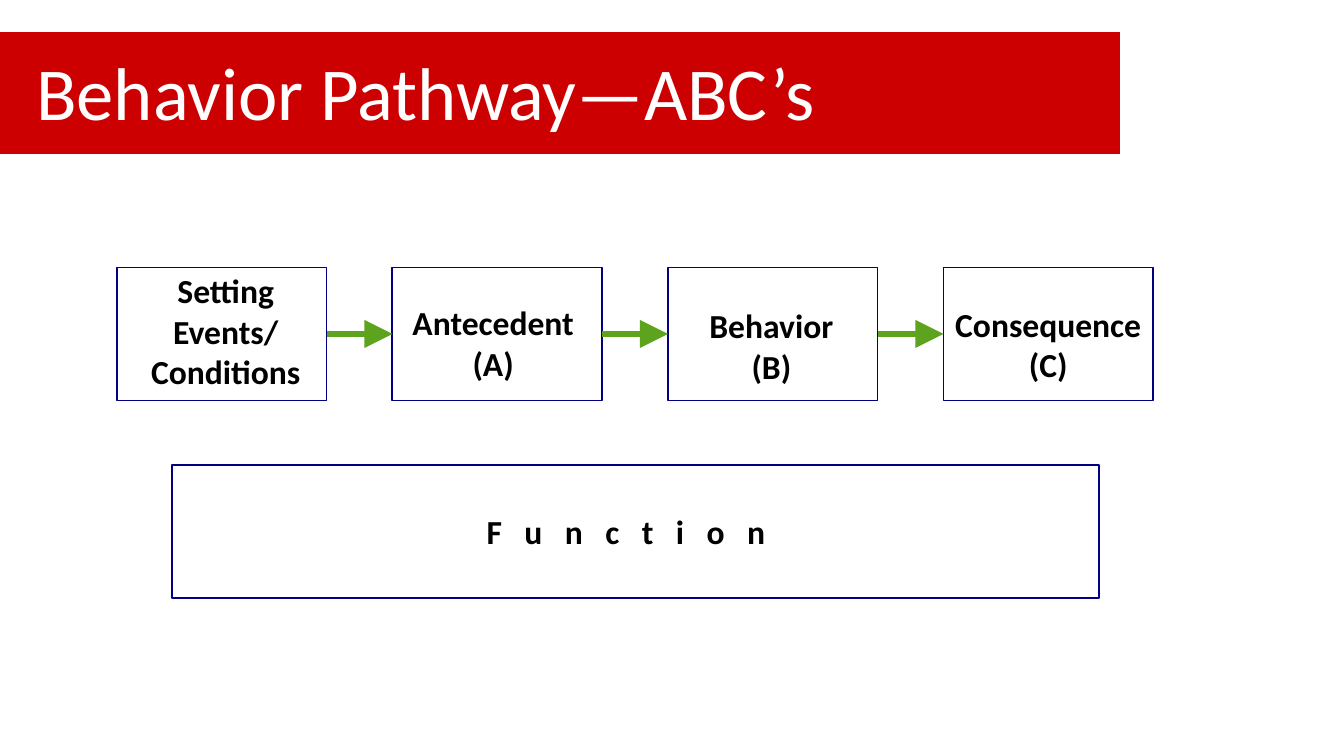
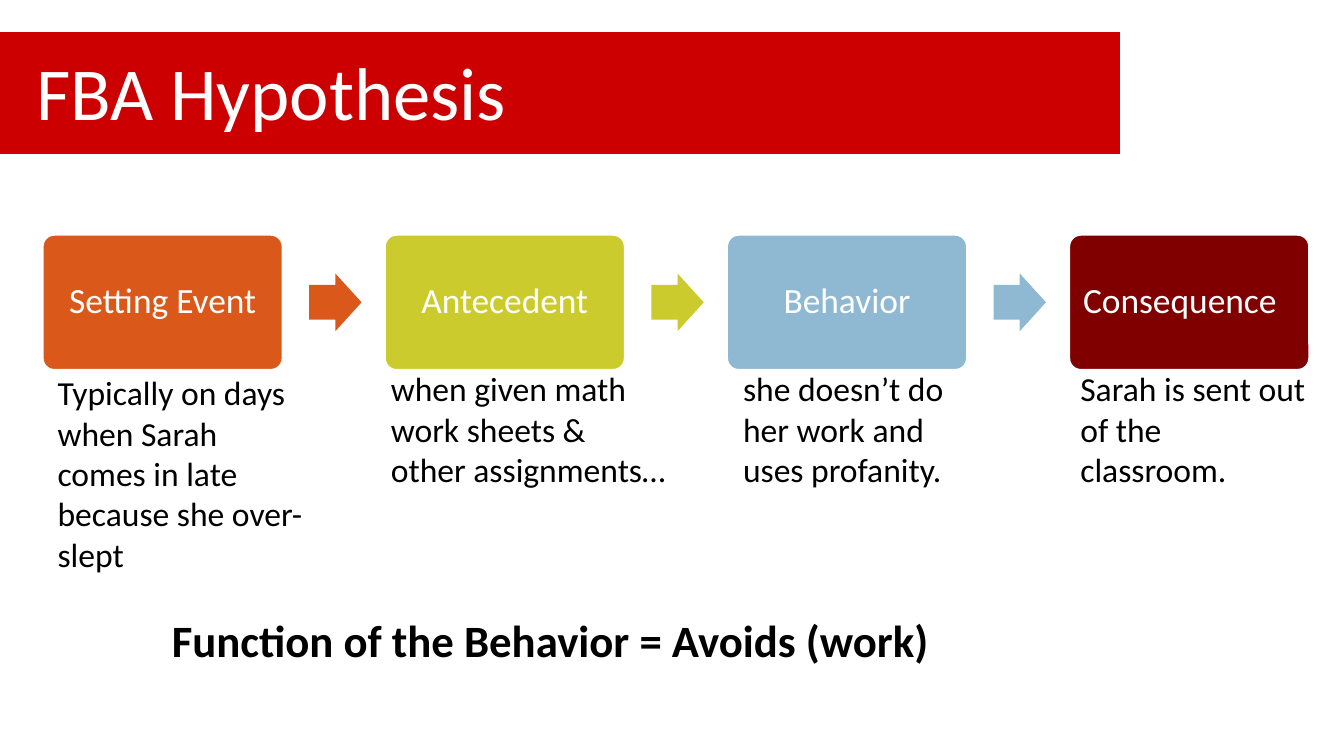
from lxml.etree import SubElement
from pptx import Presentation
from pptx.dml.color import RGBColor
from pptx.enum.shapes import MSO_CONNECTOR as CONN, MSO_SHAPE as SHAPE
from pptx.enum.text import MSO_ANCHOR as ANCHOR, PP_ALIGN as ALIGN
from pptx.oxml.ns import qn
from pptx.util import Inches, Pt

WIDTH = 10
HEIGHT = WIDTH * 9 / 16
FONT = "Calibri"
RED, WHITE, BLACK, NAVY, GREEN = "CC0000", "FFFFFF", "000000", "000080", "5DA31E"
BAND = (-0.08, 0.23, 8.42, 0.92)
TITLE = (0.17, 0.27, 8.17, 0.81)
INSETS = (0.1, 0.05, 0.1, 0.05)

PATHWAY_TITLE = "Behavior Pathway—ABC’s"
PATHWAY = [
    (["Setting Events/", "Conditions"], (0.08, 0.02, 0.02, 0)),
    (["Antecedent", "(A)"], (0.02, 0.26, 0.08, 0)),
    (["Behavior", "(B)"], (0.04, 0.28, 0.06, 0)),
    (["Consequence", "(C)"], (0.05, 0.27, 0.05, 0)),
]
PATHWAY_LEFT, PATHWAY_PITCH = 0.87, 2.05
PATHWAY_TOP, PATHWAY_W, PATHWAY_H = 1.99, 1.56, 0.99
FUNCTION = "F u n c t i o n"
FUNCTION_BOX = (1.28, 3.46, 6.9, PATHWAY_H)

HYPOTHESIS_TITLE = "FBA Hypothesis"
HYPOTHESIS = [
    ("Setting Event", "DB581B", (0.11, 0.11),
     "Typically on days when Sarah comes in late because she over-slept",
     (0.33, 2.72, 2.05, 1.62)),
    ("Antecedent", "CCCB2E", (0.11, 0.11),
     "when given math work sheets & other assignments…",
     (2.81, 2.69, 2.25, 1.31)),
    ("Behavior", "8FB8D3", (0.11, 0.11),
     "she doesn’t do her work and uses profanity.",
     (5.43, 2.69, 2.01, 1.31)),
    ("Consequence", "800000", (0.04, 0.18),
     "Sarah is sent out of the classroom.",
     (7.94, 2.69, 1.9, 1.82)),
]
STEP_LEFT, STEP_PITCH = 0.3, 2.546
STEP_TOP, STEP_W, STEP_H = 1.73, 1.82, 1.04
ARROW_GAP, ARROW_W, ARROW_H = 0.18, 0.39, 0.43
CONCLUSION = "Function of the Behavior = Avoids (work)"
CONCLUSION_BOX = (1.18, 4.51, 8.58, 0.5)


def color(value):
    return RGBColor.from_string(value)


def inches(box):
    return [Inches(v) for v in box]


def write(sp, lines, size, ink=BLACK, bold=False, align=ALIGN.LEFT,
          anchor=ANCHOR.TOP, insets=INSETS):
    tf = sp.text_frame
    tf.text = "\n".join(lines)
    tf.word_wrap = True
    tf.vertical_anchor = anchor
    tf.margin_left, tf.margin_top, tf.margin_right, tf.margin_bottom = inches(insets)
    for p in tf.paragraphs:
        p.alignment = align
        p.font.name, p.font.size, p.font.bold = FONT, Pt(size), bold
        p.font.color.rgb = color(ink)
    return tf


def add_shape(s, kind, box, fill=None, line=None, weight=1):
    sp = s.shapes.add_shape(kind, *inches(box))
    sp.shadow.inherit = False
    if fill:
        sp.fill.solid()
        sp.fill.fore_color.rgb = color(fill)
    else:
        sp.fill.background()
    if line:
        sp.line.color.rgb = color(line)
        sp.line.width = Pt(weight)
    else:
        sp.line.fill.background()
    return sp


def add_text(s, box, text, size, bold=False):
    write(s.shapes.add_textbox(*inches(box)), [text], size, bold=bold)


def add_arrow(s, x1, x2, y):
    cxn = s.shapes.add_connector(CONN.STRAIGHT, *inches((x1, y, x2, y)))
    cxn.line.color.rgb = color(GREEN)
    cxn.line.width = Pt(3)
    ln = cxn._element.spPr.find(qn("a:ln"))
    SubElement(ln, qn("a:tailEnd"), type="triangle", w="lg", len="lg")
    SubElement(cxn._element.spPr, qn("a:effectLst"))


def set_layout(layout, s):
    band = add_shape(s, SHAPE.RECTANGLE, BAND, RED, WHITE, 0.75)
    layout.shapes._spTree.insert(2, band._element)
    ph = layout.placeholders[0]
    ph.left, ph.top, ph.width, ph.height = inches(TITLE)


def add_slide(prs, layout, title):
    s = prs.slides.add_slide(layout)
    write(s.shapes.title, [title], 40, WHITE, anchor=ANCHOR.MIDDLE)
    return s


def draw_pathway(s):
    for i, (lines, insets) in enumerate(PATHWAY):
        x = PATHWAY_LEFT + i * PATHWAY_PITCH
        sp = add_shape(s, SHAPE.RECTANGLE, (x, PATHWAY_TOP, PATHWAY_W, PATHWAY_H), line=NAVY)
        write(sp, lines, 18, bold=True, align=ALIGN.CENTER, insets=insets)
        if i:
            add_arrow(s, x - PATHWAY_PITCH + PATHWAY_W, x, PATHWAY_TOP + PATHWAY_H / 2)
    sp = add_shape(s, SHAPE.RECTANGLE, FUNCTION_BOX, line=NAVY)
    tf = write(sp, [FUNCTION], 18, bold=True, align=ALIGN.CENTER, anchor=ANCHOR.MIDDLE,
               insets=(0.1, 0.05, 0.24, 0.05))
    tf.paragraphs[0].runs[0]._r.get_or_add_rPr().set("spc", "400")


def draw_hypothesis(s):
    for i, (label, fill, (left, right), text, text_box) in enumerate(HYPOTHESIS):
        x = STEP_LEFT + i * STEP_PITCH
        sp = add_shape(s, SHAPE.ROUNDED_RECTANGLE, (x, STEP_TOP, STEP_W, STEP_H),
                       fill, WHITE, 3.5)
        sp.adjustments[0] = 0.1
        tf = write(sp, [label], 19, WHITE, align=ALIGN.CENTER, anchor=ANCHOR.MIDDLE,
                   insets=(left, 0.11, right, 0.11))
        tf.paragraphs[0].line_spacing = 0.9
        if i < len(HYPOTHESIS) - 1:
            arrow = add_shape(s, SHAPE.RIGHT_ARROW,
                              (x + STEP_W + ARROW_GAP, STEP_TOP + (STEP_H - ARROW_H) / 2,
                               ARROW_W, ARROW_H), fill)
            arrow.adjustments[0] = 0.6
        add_text(s, text_box, text, 18)
    add_text(s, CONCLUSION_BOX, CONCLUSION, 24, bold=True)


def main():
    prs = Presentation()
    prs.slide_width, prs.slide_height = inches((WIDTH, HEIGHT))
    layout = prs.slide_layouts.get_by_name("Title Only")
    pathway = add_slide(prs, layout, PATHWAY_TITLE)
    set_layout(layout, pathway)
    draw_pathway(pathway)
    draw_hypothesis(add_slide(prs, layout, HYPOTHESIS_TITLE))
    prs.save("out.pptx")


if __name__ == "__main__":
    main()
